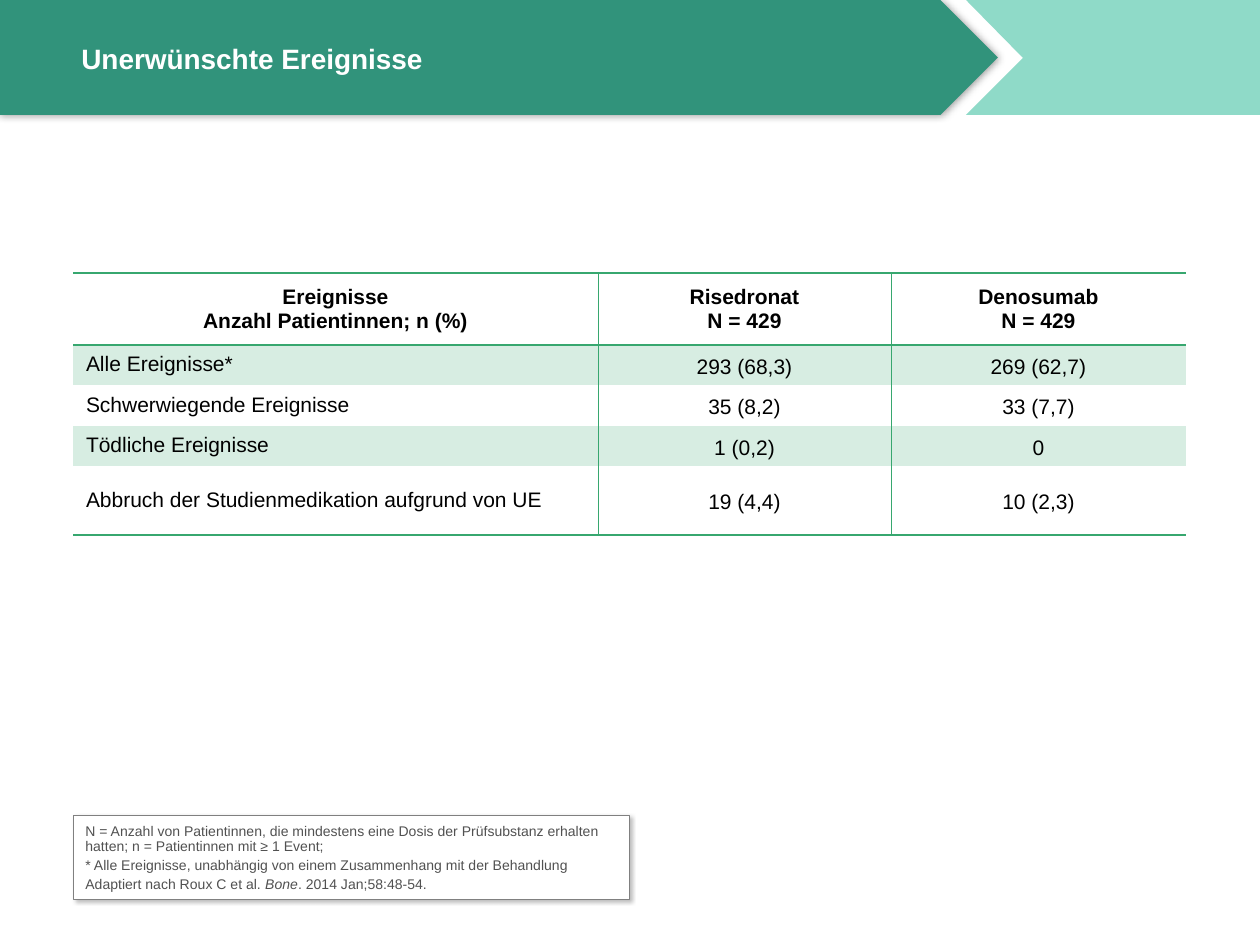
from lxml.etree import SubElement
from pptx import Presentation
from pptx.dml.color import RGBColor
from pptx.enum.shapes import MSO_SHAPE
from pptx.enum.text import MSO_ANCHOR, PP_ALIGN
from pptx.oxml.ns import qn
from pptx.util import Pt

TITLE = "Unerwünschte Ereignisse"
HEADER = [
    ["Ereignisse", "Anzahl Patientinnen; n (%)"],
    ["Risedronat", "N = 429"],
    ["Denosumab", "N = 429"],
]
ROWS = [
    ["Alle Ereignisse*", "293 (68,3)", "269 (62,7)"],
    ["Schwerwiegende Ereignisse", "35 (8,2)", "33 (7,7)"],
    ["Tödliche Ereignisse", "1 (0,2)", "0"],
    ["Abbruch der Studienmedikation aufgrund von UE", "19 (4,4)", "10 (2,3)"],
]
NOTES = [
    [("N = Anzahl von Patientinnen, die mindestens eine Dosis der Prüfsubstanz "
      "erhalten hatten; n = Patientinnen mit ≥ 1 Event;", False)],
    [("* Alle Ereignisse, unabhängig von einem Zusammenhang mit der Behandlung", False)],
    [("Adaptiert nach Roux C et al. ", False), ("Bone", True),
     (". 2014 Jan;58:48-54.", False)],
]
COL_WIDTHS = [525, 293, 295]
ROW_HEIGHTS = [72, 40, 41, 40, 69]


class Theme:
    font = "Arial"
    banner, accent = "31937B", "8FDAC8"
    rule, band = "37A76F", "D7EDE2"
    white, black, note, frame = "FFFFFF", "000000", "515151", "808080"
    title_size, table_size, note_size = 16, 12, 8


def px(n):
    return round(n * 914400 / 126)


def paint(s, color, line=None):
    s.fill.solid()
    s.fill.fore_color.rgb = RGBColor.from_string(color)
    s.shadow.inherit = False
    if line:
        s.line.color.rgb = RGBColor.from_string(line)
        s.line.width = Pt(0.25)
    else:
        s.line.fill.background()


def add_shadow(s, blur, dist, angle, alpha):
    effects = s._element.spPr.find(qn("a:effectLst"))
    shadow = SubElement(effects, qn("a:outerShdw"), blurRad=str(Pt(blur)),
                        dist=str(Pt(dist)), dir=str(angle * 60000),
                        algn="ctr", rotWithShape="0")
    color = SubElement(shadow, qn("a:srgbClr"), val=Theme.black)
    SubElement(color, qn("a:alpha"), val=str(alpha * 1000))


def add_run(p, text, size, color, bold=False, italic=False):
    r = p.add_run()
    r.text = text
    r.font.name = Theme.font
    r.font.size = Pt(size)
    r.font.bold = bold
    r.font.italic = italic
    r.font.color.rgb = RGBColor.from_string(color)


def paragraph(tf, i):
    return tf.add_paragraph() if i else tf.paragraphs[0]


def set_borders(cell, **widths):
    tcPr = cell._tc.get_or_add_tcPr()
    for side in "LRTB":
        width = widths.get(side)
        ln = SubElement(tcPr, qn(f"a:ln{side}"), w=str(Pt(width or 0)))
        if width:
            fill = SubElement(ln, qn("a:solidFill"))
            SubElement(fill, qn("a:srgbClr"), val=Theme.rule)
        else:
            SubElement(ln, qn("a:noFill"))


def set_margins(cell, side, top):
    cell.margin_left = cell.margin_right = px(side)
    cell.margin_top = cell.margin_bottom = px(top)


def add_banner(slide):
    builder = slide.shapes.build_freeform(966, 0, scale=px(1))
    builder.add_line_segments([(1260, 0), (1260, 115), (966, 115), (1023, 58)])
    paint(builder.convert_to_shape(), Theme.accent)
    s = slide.shapes.add_shape(MSO_SHAPE.PENTAGON, 0, 0, px(998), px(115))
    paint(s, Theme.banner)
    add_shadow(s, 5, 0, 0, 40)

    box = slide.shapes.add_textbox(px(69), px(16), px(844), px(84))
    tf = box.text_frame
    tf.word_wrap = True
    tf.vertical_anchor = MSO_ANCHOR.MIDDLE
    add_run(tf.paragraphs[0], TITLE, Theme.title_size, Theme.white, bold=True)


def add_notes(slide):
    s = slide.shapes.add_shape(MSO_SHAPE.RECTANGLE, px(73), px(815), px(556), px(84))
    paint(s, Theme.white, Theme.frame)
    add_shadow(s, 2, 2, 45, 25)
    tf = s.text_frame
    tf.word_wrap = True
    tf.vertical_anchor = MSO_ANCHOR.BOTTOM
    for i, runs in enumerate(NOTES):
        p = paragraph(tf, i)
        p.alignment = PP_ALIGN.LEFT
        p.line_spacing = 0.9
        p.space_before = Pt(2.4)
        for text, italic in runs:
            add_run(p, text, Theme.note_size, Theme.note, italic=italic)


def fill_cell(cell, lines, row, col):
    is_header, is_value = row == 0, row > 0 and col > 0
    last_row, last_col = len(ROWS), len(HEADER) - 1
    set_borders(cell, L=0.5 if col else None, R=0.5 if col < last_col else None,
                T=1 if row < 2 else None, B=1 if row in (0, last_row) else None)
    if row % 2:
        cell.fill.solid()
        cell.fill.fore_color.rgb = RGBColor.from_string(Theme.band)
    else:
        cell.fill.background()
    set_margins(cell, *((9, 0) if is_value else (13, 6)))
    cell.vertical_anchor = MSO_ANCHOR.MIDDLE
    for i, text in enumerate(lines):
        p = paragraph(cell.text_frame, i)
        p.alignment = PP_ALIGN.CENTER if is_header or is_value else PP_ALIGN.LEFT
        if is_value:
            p.line_spacing = 1.15
            p.space_before = p.space_after = Pt(3)
        elif not is_header:
            p.line_spacing = 0.95
        add_run(p, text, Theme.table_size, Theme.black, bold=is_header)


def add_events_table(slide):
    content = [HEADER] + [[[text] for text in row] for row in ROWS]
    table = slide.shapes.add_table(len(content), len(HEADER), px(73), px(273),
                                   px(sum(COL_WIDTHS)), px(sum(ROW_HEIGHTS))).table
    table.first_row = table.horz_banding = False
    for column, width in zip(table.columns, COL_WIDTHS):
        column.width = px(width)
    for row, height in zip(table.rows, ROW_HEIGHTS):
        row.height = px(height)
    for r, row in enumerate(content):
        for c, lines in enumerate(row):
            fill_cell(table.cell(r, c), lines, r, c)


def main():
    prs = Presentation()
    prs.slide_width, prs.slide_height = px(1260), px(945)
    slide = prs.slides.add_slide(prs.slide_layouts[6])
    add_banner(slide)
    add_notes(slide)
    add_events_table(slide)
    prs.save("out.pptx")


if __name__ == "__main__":
    main()
